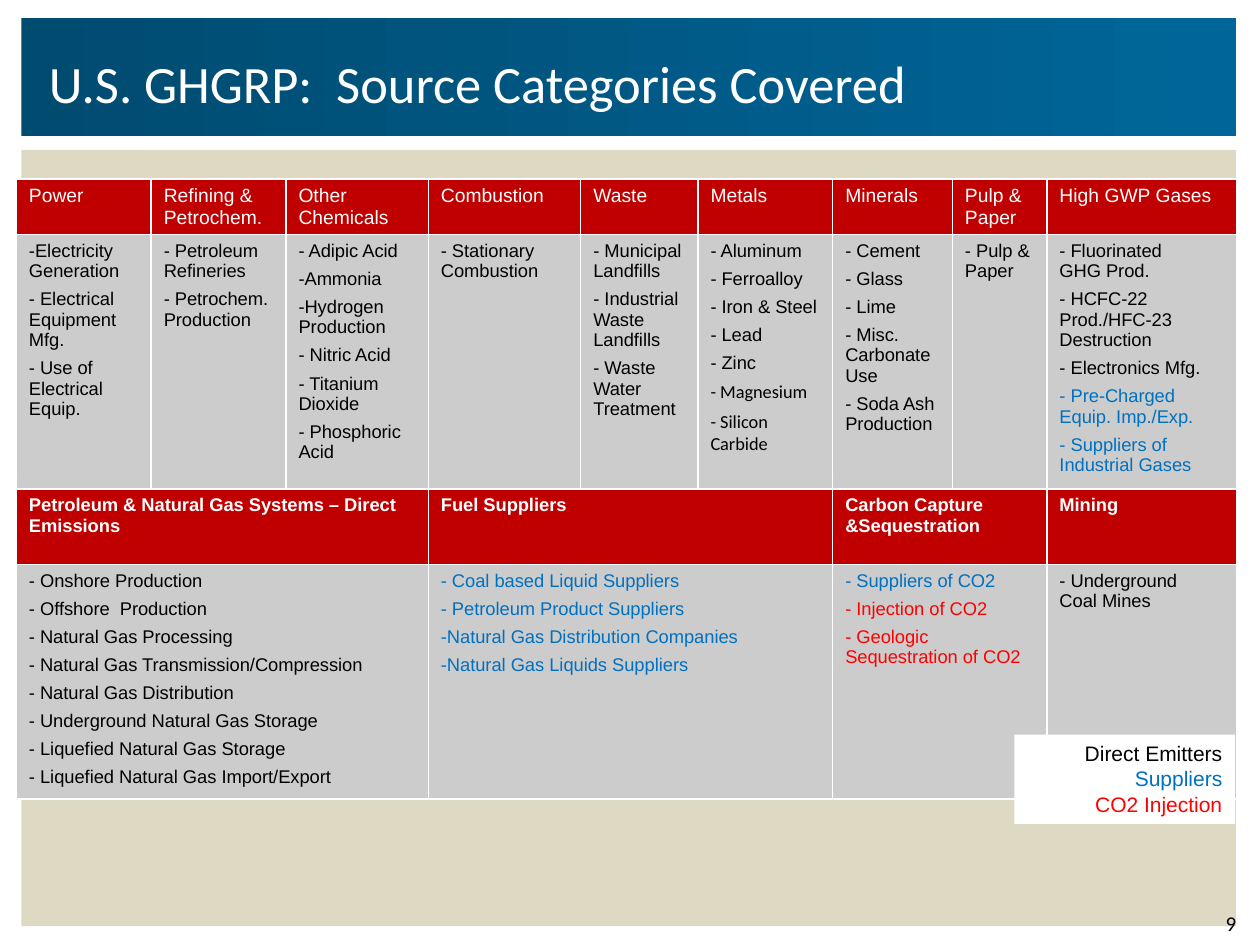
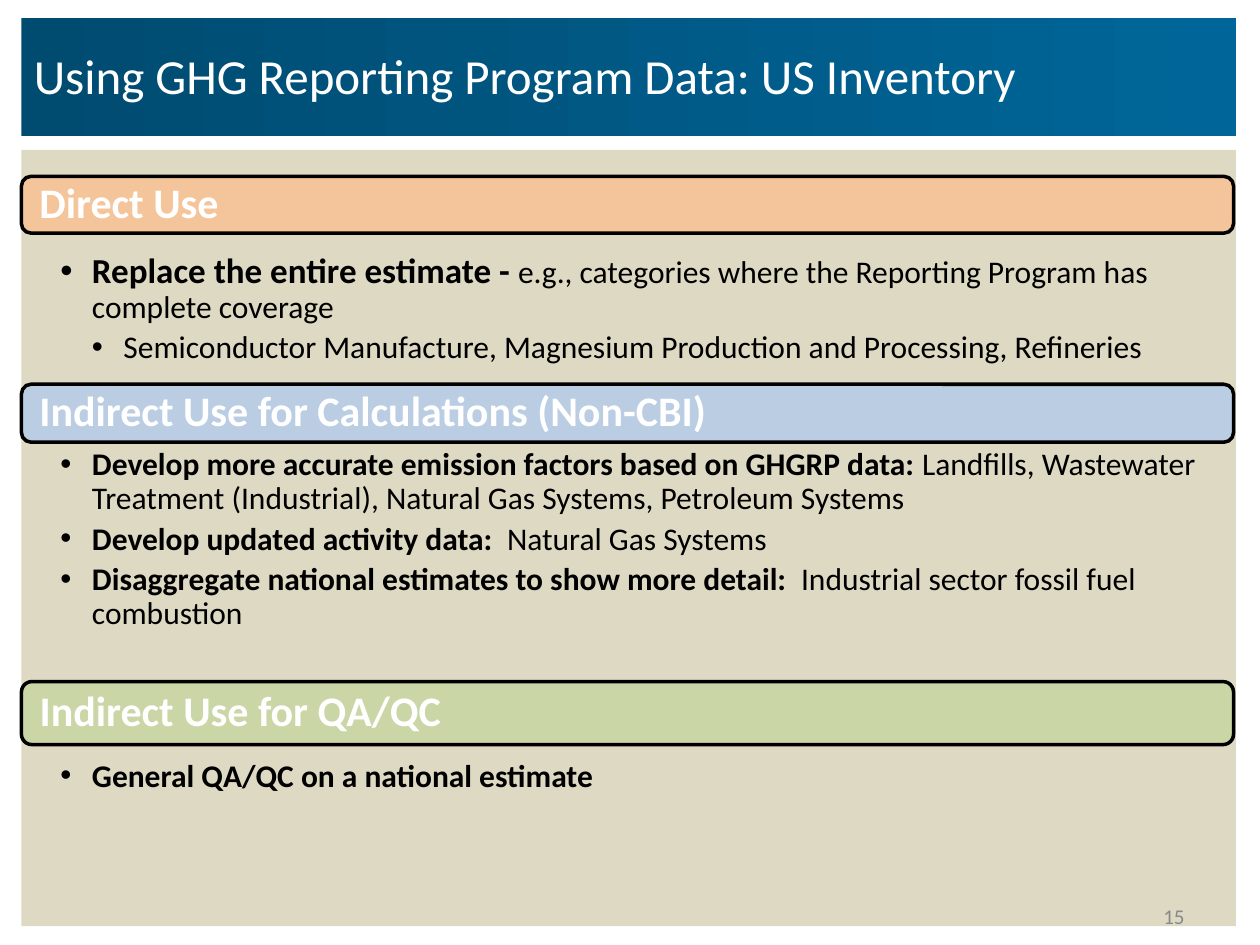
from lxml import etree
from pptx import Presentation
from pptx.dml.color import RGBColor
from pptx.enum.shapes import MSO_SHAPE as Shape
from pptx.enum.text import MSO_ANCHOR as Anchor, PP_ALIGN as Align
from pptx.oxml.ns import qn
from pptx.util import Inches, Pt

COLORS = {
    "white": "FFFFFF", "black": "000000", "sand": "DDD9C3",
    "band_start": "004B70", "band_end": "006699",
    "header": "C00000", "cell": "CCCCCC", "grey": "898989",
    "supplier": "0070C0", "injection": "FF0000",
    "orange": "FAC090", "blue": "B9CDE5", "green": "C3D69B",
}


def rgb(name):
    return RGBColor.from_string(COLORS[name])


class Slides:
    """Holds the deck, its style and the current page."""

    body_font = "Calibri"
    table_font = "Arial"

    def __init__(self):
        self.deck = Presentation()
        self.deck.slide_width, self.deck.slide_height = Inches(10), Inches(7.5)
        self.page = None

    def new_page(self):
        """Start a page with the sand panel and the blue title band."""
        self.page = self.deck.slides.add_slide(self.deck.slide_layouts[6])
        self.shape(0.17, 1.19, 9.64, 6.16, "sand")
        band = self.shape(0.17, 0.14, 9.64, 0.94, "band_end")
        band.fill.gradient()
        band.fill.gradient_angle = 0
        for stop, color in zip(band.fill.gradient_stops, ("band_start", "band_end")):
            stop.color.rgb = rgb(color)

    def shape(self, left, top, width, height, fill, kind=Shape.RECTANGLE):
        shape = self.page.shapes.add_shape(
            kind, Inches(left), Inches(top), Inches(width), Inches(height))
        shape.shadow.inherit = False
        shape.fill.solid()
        shape.fill.fore_color.rgb = rgb(fill)
        shape.line.fill.background()
        return shape

    def span(self, para, text, size, color="black", bold=False, font=None):
        span = para.add_run()
        span.text = text
        span.font.size = Pt(size)
        span.font.bold = bold
        span.font.name = font or self.body_font
        span.font.color.rgb = rgb(color)

    def text(self, left, top, width, height):
        box = self.page.shapes.add_textbox(
            Inches(left), Inches(top), Inches(width), Inches(height))
        box.text_frame.word_wrap = True
        return box.text_frame

    def line(self, left, top, width, height, text, size, color, align=Align.LEFT):
        """Add a single line of text, centred vertically in its box."""
        frame = self.text(left, top, width, height)
        frame.vertical_anchor = Anchor.MIDDLE
        frame.paragraphs[0].alignment = align
        self.span(frame.paragraphs[0], text, size, color)

    def legend(self, left, top, width, height, entries):
        frame = self.shape(left, top, width, height, "white").text_frame
        frame.vertical_anchor = Anchor.TOP
        for para, (text, color) in zip(paragraphs(frame, len(entries)), entries):
            para.alignment = Align.RIGHT
            self.span(para, text, 12, color, font=self.table_font)

    def section_bar(self, top, height, text, fill, opacity):
        bar = self.shape(0.17, top, 9.62, height, fill, Shape.ROUNDED_RECTANGLE)
        tint = bar.fill._xPr.find(qn("a:solidFill"))[0]
        etree.SubElement(tint, qn("a:alpha"), val=str(opacity * 1000))
        bar.line.color.rgb = rgb("black")
        bar.line.width = Pt(2)
        frame = bar.text_frame
        frame.margin_left = Inches(0.12)
        frame.margin_top = frame.margin_bottom = 0
        frame.vertical_anchor = Anchor.MIDDLE
        para = frame.paragraphs[0]
        para.alignment = Align.LEFT
        para.line_spacing = 0.9
        self.span(para, text, 24, "white", bold=True)

    def bullets(self, top, height, items):
        """Add bullets; each item is a level and its (text, size, bold) spans."""
        frame = self.text(0.17, top, 9.62, height)
        frame.margin_left, frame.margin_right = Inches(0.31), Inches(0.06)
        frame.margin_top = frame.margin_bottom = Inches(0.01)
        for para, (level, spans) in zip(paragraphs(frame, len(items)), items):
            props = para._p.get_or_add_pPr()
            props.set("marL", str(Inches(0.25 * level)))
            props.set("indent", str(-Inches(0.25)))
            etree.SubElement(props, qn("a:buFont"), typeface="Arial")
            etree.SubElement(props, qn("a:buChar"), char="•")
            para.level = level - 1
            para.line_spacing = 0.9
            para.space_after = Pt(3.6)
            for text, size, bold in spans:
                self.span(para, text, size, bold=bold)

    def table(self, left, top, widths, heights):
        table = self.page.shapes.add_table(
            len(heights), len(widths), Inches(left), Inches(top),
            Inches(sum(widths)), Inches(sum(heights))).table
        table.horz_banding = False
        for column, width in zip(table.columns, widths):
            column.width = Inches(width)
        for row, height in zip(table.rows, heights):
            row.height = Inches(height)
        for index, row in enumerate(table.rows):
            for cell in row.cells:
                self.cell_style(cell, "cell" if index % 2 else "header")
        return table

    def cell_style(self, cell, fill):
        props = cell._tc.get_or_add_tcPr()
        for side in ("lnL", "lnR", "lnT", "lnB"):
            border = etree.SubElement(props, qn("a:" + side), w=str(Pt(1)))
            solid = etree.SubElement(border, qn("a:solidFill"))
            etree.SubElement(solid, qn("a:srgbClr"), val=COLORS["white"])
        cell.fill.solid()
        cell.fill.fore_color.rgb = rgb(fill)

    def cell_list(self, cell, items, size, color="black", bold=False):
        """Fill a cell; an item is text or (text, color, font), | breaks a line."""
        frame = cell.text_frame
        for index, para in enumerate(paragraphs(frame, len(items))):
            item = items[index]
            text, tint, font = (item, color, self.table_font) if isinstance(item, str) else item
            if index:
                para.space_before = Pt(4.4)
            for number, part in enumerate(text.split("|")):
                if number:
                    para.add_line_break()
                self.span(para, part, size, tint, bold, font)


def paragraphs(frame, count):
    return [frame.paragraphs[0]] + [frame.add_paragraph() for _ in range(count - 1)]


def supplier(text):
    return text, "supplier", Slides.table_font


def injection(text):
    return text, "injection", Slides.table_font


def in_body_font(text):
    return text, "black", Slides.body_font


SECTORS = [
    ("Power", ["-Electricity Generation", "- Electrical Equipment Mfg.",
               "- Use of Electrical Equip."]),
    ("Refining & Petrochem.", ["- Petroleum Refineries", "- Petrochem. Production"]),
    ("Other Chemicals", ["- Adipic Acid", "-Ammonia", "-Hydrogen Production",
                         "- Nitric Acid", "- Titanium Dioxide", "- Phosphoric Acid"]),
    ("Combustion", ["- Stationary Combustion"]),
    ("Waste", ["- Municipal Landfills", "- Industrial Waste Landfills",
               "- Waste Water Treatment"]),
    ("Metals", ["- Aluminum", "- Ferroalloy", "- Iron & Steel", "- Lead", "- Zinc",
                in_body_font("- Magnesium"), in_body_font("- Silicon Carbide")]),
    ("Minerals", ["- Cement", "- Glass", "- Lime", "- Misc. Carbonate Use",
                  "- Soda Ash Production"]),
    ("Pulp & Paper", ["- Pulp & Paper"]),
    ("High GWP Gases", ["- Fluorinated|GHG Prod.", "- HCFC-22 Prod./HFC-23 Destruction",
                        "- Electronics Mfg.", supplier("- Pre-Charged Equip. Imp./Exp."),
                        supplier("- Suppliers of Industrial Gases")]),
]

# Heading, number of columns covered, entries
WIDE_SECTORS = [
    ("Petroleum & Natural Gas Systems – Direct Emissions", 3,
     ["- Onshore Production", "- Offshore  Production", "- Natural Gas Processing",
      "- Natural Gas Transmission/Compression", "- Natural Gas Distribution",
      "- Underground Natural Gas Storage", "- Liquefied Natural Gas Storage",
      "- Liquefied Natural Gas Import/Export"]),
    ("Fuel Suppliers", 3,
     [supplier("- Coal based Liquid Suppliers"), supplier("- Petroleum Product Suppliers"),
      supplier("-Natural Gas Distribution Companies"),
      supplier("-Natural Gas Liquids Suppliers")]),
    ("Carbon Capture &Sequestration", 2,
     [supplier("- Suppliers of CO2"), injection("- Injection of CO2"),
      injection("- Geologic Sequestration of CO2")]),
    ("Mining", 1, ["- Underground|Coal Mines"]),
]


def source_categories(slides):
    slides.new_page()
    table = slides.table(0.13, 1.42,
                         [1.07, 1.07, 1.13, 1.21, 0.93, 1.07, 0.95, 0.75, 1.51],
                         [0.44, 2.02, 0.6, 1.86])
    for column, (heading, entries) in enumerate(SECTORS):
        slides.cell_list(table.cell(0, column), [heading], 11, "white")
        slides.cell_list(table.cell(1, column), entries, 10.5)
    column = 0
    for heading, columns, entries in WIDE_SECTORS:
        if columns > 1:
            for row in (2, 3):
                table.cell(row, column).merge(table.cell(row, column + columns - 1))
        slides.cell_list(table.cell(2, column), [heading], 10.5, "white", bold=True)
        slides.cell_list(table.cell(3, column), entries, 10.5)
        column += columns
    slides.line(7.83, 7.16, 2.08, 0.34, "9", 12, "black", Align.RIGHT)
    slides.legend(8.05, 5.83, 1.75, 0.71, [
        ("Direct Emitters", "black"), ("Suppliers", "supplier"),
        ("CO2 Injection", "injection")])
    slides.line(0.29, 0.31, 8.42, 0.69, "U.S. GHGRP:  Source Categories Covered", 30, "white")


def inventory_uses(slides):
    slides.new_page()
    slides.line(0.17, 0.12, 8.63, 0.95,
                "Using GHG Reporting Program Data: US Inventory", 28, "white")
    slides.line(7.17, 7.19, 2.33, 0.16, "15", 12, "grey", Align.RIGHT)
    slides.section_bar(1.4, 0.45, "Direct Use", "orange", 80)
    slides.bullets(2, 0.94, [
        (1, [("Replace the entire estimate - ", 20, True),
             ("e.g., categories where the Reporting Program has complete coverage", 18, False)]),
        (2, [("Semiconductor Manufacture, Magnesium Production and Processing, Refineries",
              18, False)]),
    ])
    slides.section_bar(3.05, 0.46, "Indirect Use for Calculations (Non-CBI)", "blue", 96)
    slides.bullets(3.55, 1.75, [
        (1, [("Develop more accurate emission factors based on GHGRP data: ", 18, True),
             ("Landfills, Wastewater Treatment (Industrial), Natural Gas Systems, "
              "Petroleum Systems", 18, False)]),
        (1, [("Develop updated activity data: ", 18, True),
             (" Natural Gas Systems", 18, False)]),
        (1, [("Disaggregate national estimates to show more detail:  ", 18, True),
             ("Industrial sector fossil fuel combustion", 18, False)]),
    ])
    slides.section_bar(5.41, 0.5, "Indirect Use for QA/QC", "green", 68)
    slides.bullets(6.02, 0.81, [(1, [("General QA/QC on a national estimate", 18, True)])])


def main():
    slides = Slides()
    source_categories(slides)
    inventory_uses(slides)
    slides.deck.save("out.pptx")


if __name__ == "__main__":
    main()
